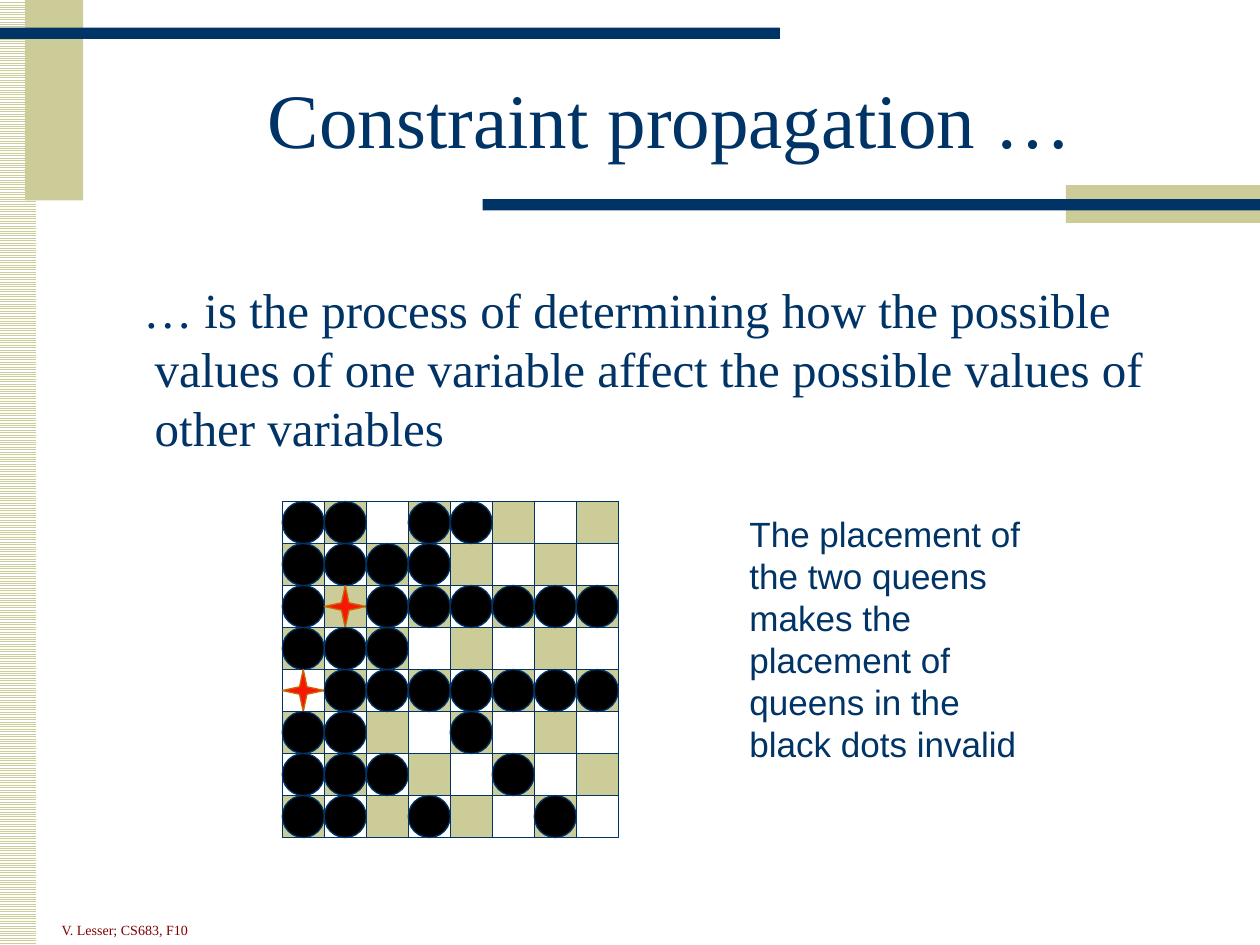
from itertools import product
from pptx import Presentation
from pptx.dml.color import RGBColor
from pptx.enum.dml import MSO_PATTERN
from pptx.enum.shapes import MSO_SHAPE
from pptx.enum.text import MSO_ANCHOR, PP_ALIGN
from pptx.util import Inches, Pt

NAVY, TAN, WHITE = "003366", "CCCC99", "FFFFFF"
SERIF, SANS = "Times New Roman", "Arial"
tint = RGBColor.from_string

deck = Presentation()
deck.slide_width, deck.slide_height = Inches(10), Inches(7.5)
wide, high = deck.slide_width / 100, deck.slide_height / 100
slide = deck.slides.add_slide(deck.slide_layouts[6])


def draw(home, kind, left, top, width, height, fill=None, line=None):
    """Add a preset shape to home; lengths are percent of the slide."""
    shape = home.shapes.add_shape(kind, int(left * wide), int(top * high),
                                  int(width * wide), int(height * high))
    shape.shadow.inherit = False
    if fill:
        shape.fill.solid()
        shape.fill.fore_color.rgb = tint(fill)
    else:
        shape.fill.background()
    if line:
        shape.line.color.rgb = tint(line)
        shape.line.width = Pt(0.75)
    else:
        shape.line.fill.background()
    return shape


def write(text, left, top, width, height, size, font=SERIF, color=NAVY,
          anchor=MSO_ANCHOR.TOP):
    """Add a wrapped text box, in percent of the slide; return its paragraph."""
    box = slide.shapes.add_textbox(int(left * wide), int(top * high),
                                   int(width * wide), int(height * high))
    box.text_frame.word_wrap = True
    box.text_frame.vertical_anchor = anchor
    para = box.text_frame.paragraphs[0]
    run = para.add_run()
    run.text = text
    run.font.size = Pt(size)
    run.font.name = font
    run.font.color.rgb = tint(color)
    return para


# Stripes and bars of the frame
strip = draw(slide, MSO_SHAPE.RECTANGLE, -2.8, 0, 5.7, 100, WHITE)
strip.fill.patterned()
strip.fill.pattern = MSO_PATTERN.LIGHT_HORIZONTAL
strip.fill.fore_color.rgb = tint(TAN)
strip.fill.back_color.rgb = tint(WHITE)
for *bar, color in [
    (2, 0, 4.6, 21.2, TAN),
    (0, 2.93, 61.9, 1.2, NAVY),
    (84.6, 19.6, 15.4, 4, TAN),
    (38.3, 21.07, 61.9, 1.2, NAVY),
]:
    draw(slide, MSO_SHAPE.RECTANGLE, *bar, color)

# Title, definition and footer
write("V. Lesser; CS683, F10", 3.9, 94.93, 17.4, 5.07, 8,
      color="800000", anchor=MSO_ANCHOR.BOTTOM)
title = write("Constraint propagation …", 8.2, 5.33, 90, 15.87, 44,
              anchor=MSO_ANCHOR.MIDDLE)
title.alignment = PP_ALIGN.CENTER
title.line_spacing = 0.85
body = write("… is the process of determining how the possible values of one "
             "variable affect the possible values of other variables",
             7.5, 28.93, 85, 60, 28)
indent = body._p.get_or_add_pPr()
indent.set("marL", str(Inches(0.38)))
indent.set("indent", str(Inches(-0.09)))

# Chess board: queens as stars, every square they attack as a dot
SIDE = 8
left, top = 22.4, 53.07
col_w, row_h = 100 / 30, 100 / 22.5
queens = [(2, 1), (4, 0)]
board = slide.shapes.add_group_shape()
draw(board, MSO_SHAPE.RECTANGLE, left, top, SIDE * col_w, SIDE * row_h,
     line=NAVY)
cells = [(row, col, (left + col * col_w, top + row * row_h, col_w, row_h))
         for row, col in product(range(SIDE), repeat=2)]
for row, col, cell in cells:
    if (row + col) % 2:
        draw(board, MSO_SHAPE.RECTANGLE, *cell, TAN, NAVY)
for row, col, cell in cells:
    if (row, col) in queens:
        star = draw(board, MSO_SHAPE.STAR_4_POINT, *cell, "F81706", "CC6600")
        star.adjustments[0] = 0.125
    elif any(row == r or col == c or abs(row - r) == abs(col - c)
             for r, c in queens):
        draw(board, MSO_SHAPE.OVAL, *cell, "000000", NAVY)

write("The placement of the two queens makes the placement of queens in the "
      "black dots invalid", 58.5, 53.6, 25.4, 28, 20, SANS)

deck.save("out.pptx")
